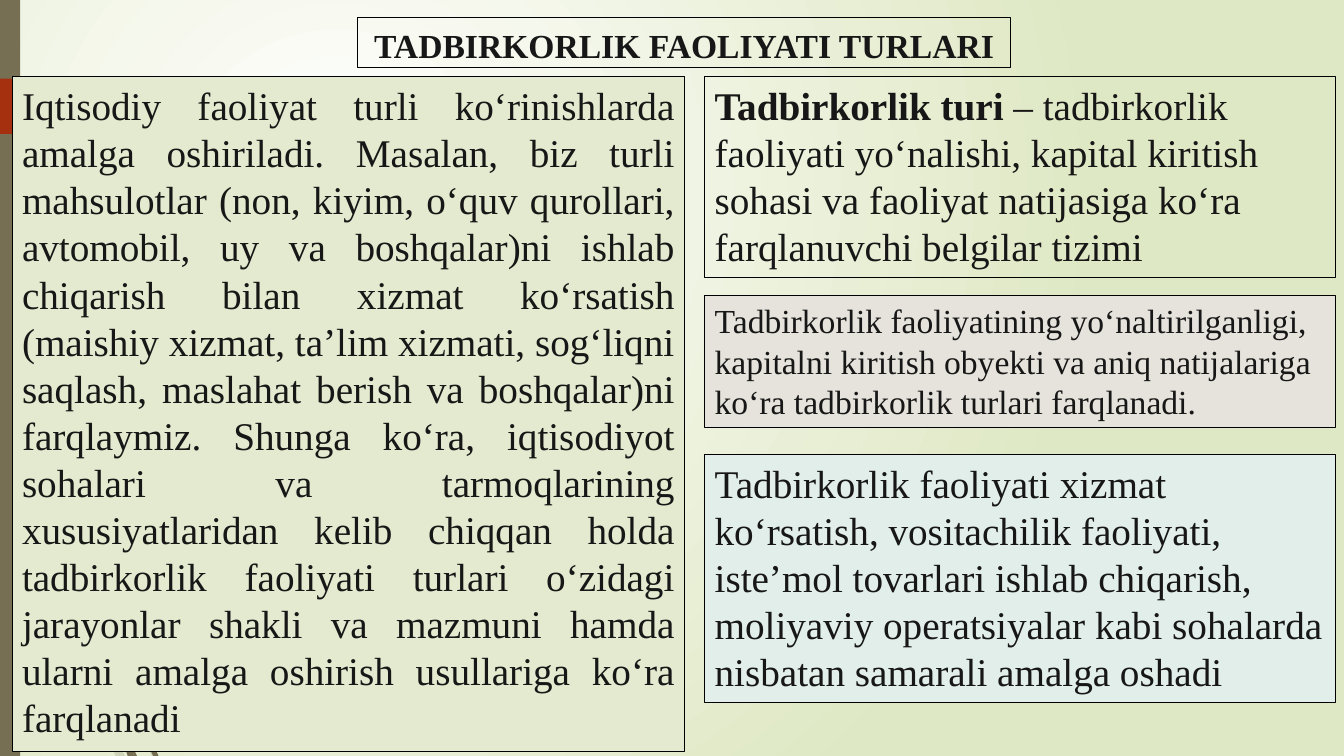
from lxml import etree
from pptx import Presentation
from pptx.dml.color import RGBColor
from pptx.enum.shapes import MSO_SHAPE as Preset
from pptx.enum.text import MSO_AUTO_SIZE as AutoSize, PP_ALIGN as Align
from pptx.oxml.ns import qn
from pptx.util import Inches, Pt

INK, OLIVE, RUST = "181717", "766F54", "A53010"


def paint(fill, color):
    fill.solid()
    fill.fore_color.rgb = RGBColor.from_string(color)


presentation = Presentation()
presentation.slide_width = Inches(13.33)
presentation.slide_height = Inches(7.5)
slide = presentation.slides.add_slide(presentation.slide_layouts[6])
shapes = slide.shapes


def place(left, top, width, height):
    """Turn percentages of the slide into lengths."""
    across, down = presentation.slide_width / 100, presentation.slide_height / 100
    return int(left * across), int(top * down), int(width * across), int(height * down)


# Background: radial gradient
background = slide.background.fill
background.gradient()
for stop, color, position in zip(background.gradient_stops, ("FFFFFF", "DFE8C4"), (0, 1)):
    stop.color.rgb = RGBColor.from_string(color)
    stop.position = position
linear = next(slide.element.iter(qn("a:lin")))
radial = etree.Element(qn("a:path"), path="circle")
etree.SubElement(radial, qn("a:fillToRect"), l="50000", t="50000", r="100000", b="100000")
linear.getparent().replace(linear, radial)

# Wisps at the lower left, in thousandths of the slide: (opacity, points)
wisps = [
    (20, [(69, 809), (66, 795), (66, 813), (92, 925), (113, 1000), (116, 1000), (95, 923)]),
    (20, [(89, 1000), (93, 1000), (79, 948)]),
    (20, [(76, 952), (86, 1000), (89, 1000)]),
    (20, [(70, 911), (74, 943), (76, 952), (89, 1000), (79, 948)]),
    (100, [(85, 865), (82, 855), (83, 875), (99, 944), (114, 1000), (118, 1000), (102, 941)]),
    (100, [(100, 1000), (102, 1000), (91, 959)]),
    (100, [(88, 963), (95, 1000), (98, 1000)]),
    (100, [(82, 921), (87, 956), (88, 963), (98, 1000), (100, 1000), (91, 959)]),
]
scale = (presentation.slide_width / 1000, presentation.slide_height / 1000)
for opacity, points in wisps:
    builder = shapes.build_freeform(*points[0], scale=scale)
    builder.add_line_segments(points[1:], close=True)
    wisp = builder.convert_to_shape()
    wisp.shadow.inherit = False
    wisp.line.fill.background()
    paint(wisp.fill, OLIVE)
    if opacity < 100:
        tint = next(wisp.element.spPr.iter(qn("a:srgbClr")))
        etree.SubElement(tint, qn("a:alpha"), val=str(opacity * 1000))

# Side bar and arrow tab
for preset, area, color in [
    (Preset.RECTANGLE, (0, 0, 1.5, 100), OLIVE),
    (Preset.PENTAGON, (0, 10.4, 13.05, 7.33), RUST),
]:
    ornament = shapes.add_shape(preset, *place(*area))
    ornament.shadow.inherit = False
    ornament.line.fill.background()
    paint(ornament.fill, color)

# Framed texts: area, fill, size, alignment, runs as (text, bold)
RIGHT, RIGHT_WIDTH, BODY_TOP = 52.44, 46.96, 10.13
frames = [
    ((26.63, 2.27, 48.54, 6.67), None, 24, Align.CENTER,
     [("TADBIRKORLIK FAOLIYATI TURLARI", True)]),
    ((0.9, BODY_TOP, 50.04, 89.33), "E3EACF", 28, Align.JUSTIFY,
     [("Iqtisodiy faoliyat turli ko‘rinishlarda amalga oshiriladi. Masalan, biz turli "
       "mahsulotlar (non, kiyim, o‘quv qurollari, avtomobil, uy va boshqalar)ni ishlab "
       "chiqarish bilan xizmat ko‘rsatish (maishiy xizmat, ta’lim xizmati, sog‘liqni "
       "saqlash, maslahat berish va boshqalar)ni farqlaymiz. Shunga ko‘ra, iqtisodiyot "
       "sohalari va tarmoqlarining xususiyatlaridan kelib chiqqan holda tadbirkorlik "
       "faoliyati turlari o‘zidagi jarayonlar shakli va mazmuni hamda ularni amalga "
       "oshirish usullariga ko‘ra farqlanadi", False)]),
    ((RIGHT, 60.13, RIGHT_WIDTH, 32.8), "E1EEE9", 28, Align.LEFT,
     [("Tadbirkorlik faoliyati xizmat ko‘rsatish, vositachilik faoliyati, iste’mol "
       "tovarlari ishlab chiqarish, moliyaviy operatsiyalar kabi sohalarda nisbatan "
       "samarali amalga oshadi", False)]),
    ((RIGHT, 39.07, RIGHT_WIDTH, 17.47), "E5E3DB", 24, Align.LEFT,
     [("Tadbirkorlik faoliyatining yo‘naltirilganligi, kapitalni kiritish obyekti va "
       "aniq natijalariga ko‘ra tadbirkorlik turlari farqlanadi.", False)]),
    ((RIGHT, BODY_TOP, RIGHT_WIDTH, 26.53), None, 28, Align.LEFT,
     [("Tadbirkorlik turi", True),
      (" – tadbirkorlik faoliyati yo‘nalishi, kapital kiritish sohasi va faoliyat "
       "natijasiga ko‘ra farqlanuvchi belgilar tizimi", False)]),
]
for area, color, size, alignment, runs in frames:
    box = shapes.add_textbox(*place(*area))
    if color:
        paint(box.fill, color)
    paint(box.line.fill, "000000")
    box.line.width = Pt(0.75)
    is_title = alignment == Align.CENTER
    box.text_frame.word_wrap = not is_title
    box.text_frame.auto_size = AutoSize.SHAPE_TO_FIT_TEXT
    paragraph = box.text_frame.paragraphs[0]
    paragraph.alignment = alignment
    if is_title:
        paragraph.line_spacing = 1.07
        paragraph.space_after = Pt(8)
    for text, bold in runs:
        run = paragraph.add_run()
        run.text = text
        run.font.name = "Times New Roman"
        run.font.size = Pt(size)
        run.font.bold = bold
        paint(run.font.fill, INK)

presentation.save("out.pptx")
